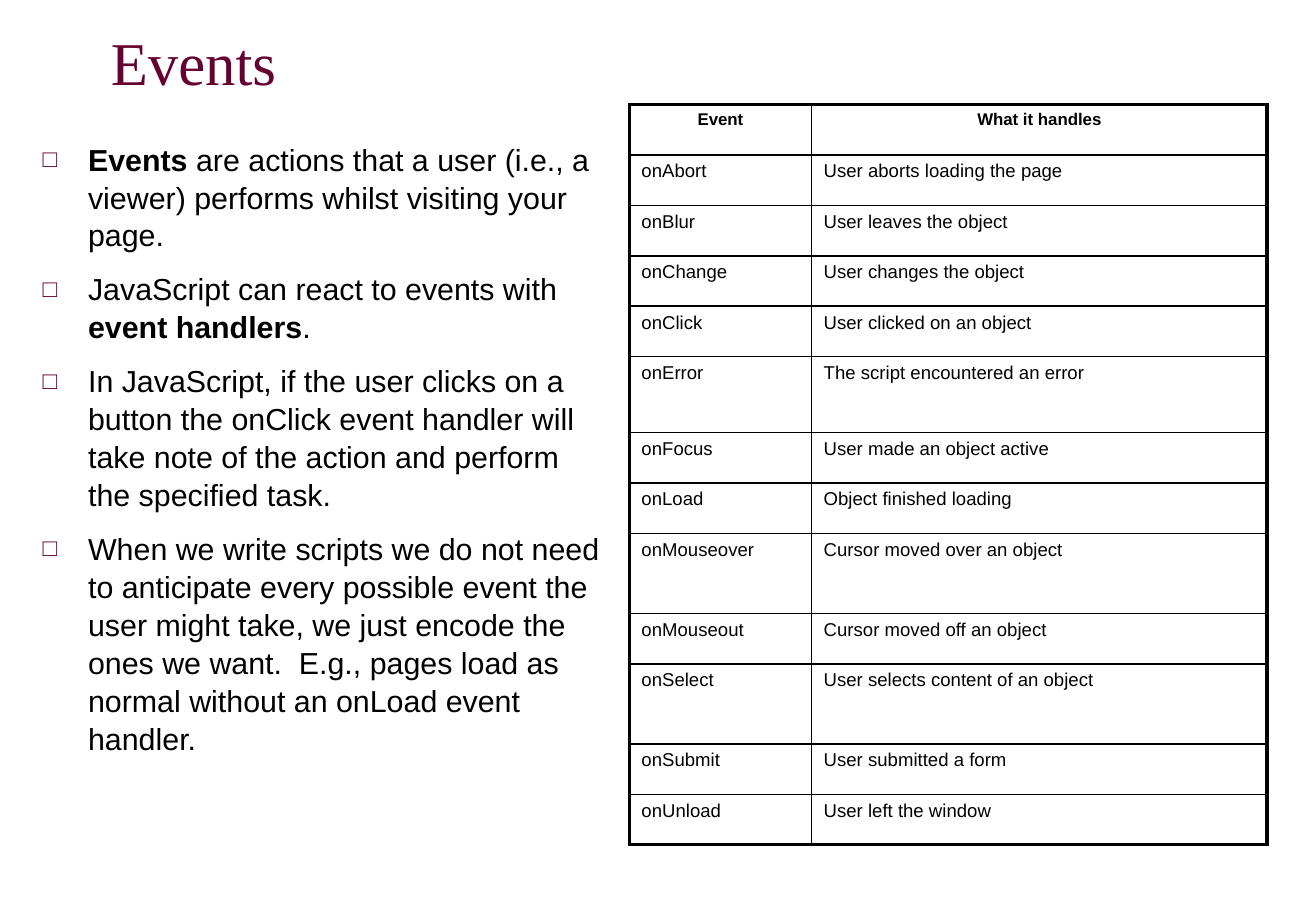
from lxml import etree
from pptx import Presentation
from pptx.dml.color import RGBColor
from pptx.enum import text
from pptx.oxml import ns
from pptx.util import Pt

COLORS = {"title": "660033", "text": "000000"}


def add_run(paragraph, content, size, font="Arial", color="text", bold=False):
    run = paragraph.add_run()
    run.text = content
    run.font.name = font
    run.font.size = Pt(size)
    run.font.bold = bold
    run.font.color.rgb = RGBColor.from_string(COLORS[color])


def add_element(parent, tag, **attributes):
    return etree.SubElement(parent, ns.qn(tag), attributes)


presentation = Presentation()
presentation.slide_width = Pt(780)
presentation.slide_height = Pt(540)
slide = presentation.slides.add_slide(presentation.slide_layouts[1])

title = slide.shapes.title
title.left, title.top, title.width, title.height = Pt(58.5), Pt(0), Pt(663), Pt(72)
title.text_frame.vertical_anchor = text.MSO_ANCHOR.MIDDLE
title.text_frame.auto_size = text.MSO_AUTO_SIZE.NONE
title_paragraph = title.text_frame.paragraphs[0]
title_paragraph.alignment = text.PP_ALIGN.LEFT
add_run(title_paragraph, "Events", 36, "Times New Roman", "title")

points = [
    [("Events", True),
     (" are actions that a user (i.e., a viewer) performs whilst visiting your page.", False)],
    [("JavaScript can react to events with ", False), ("event handlers", True), (".", False)],
    [("In JavaScript, if the user clicks on a button the onClick event handler will "
      "take note of the action and perform the specified task.", False)],
    [("When we write scripts we do not need to anticipate every possible event the "
      "user might take, we just encode the ones we want.  E.g., pages load as normal "
      "without an onLoad event handler.", False)],
]
body = slide.placeholders[1]
body.left, body.top, body.width, body.height = Pt(18), Pt(79), Pt(348), Pt(420)
body.text_frame.auto_size = text.MSO_AUTO_SIZE.NONE
for index, point in enumerate(points):
    paragraph = body.text_frame.add_paragraph() if index else body.text_frame.paragraphs[0]
    paragraph.line_spacing = 1.04
    paragraph.space_before = Pt(3.6 if index else 0)
    paragraph.space_after = Pt(6)
    properties = paragraph._p.get_or_add_pPr()
    properties.set("marL", str(Pt(27)))
    properties.set("indent", str(Pt(-27)))
    bullet_color = add_element(properties, "a:buClr")
    add_element(bullet_color, "a:srgbClr", val=COLORS["title"])
    add_element(properties, "a:buSzPct", val="80000")
    add_element(properties, "a:buFont", typeface="Arial")
    add_element(properties, "a:buChar", char="□")
    for content, bold in point:
        add_run(paragraph, content, 18, bold=bold)

handlers = [
    ("Event", "What it handles"),
    ("onAbort", "User aborts loading the page"),
    ("onBlur", "User leaves the object"),
    ("onChange", "User changes the object"),
    ("onClick", "User clicked on an object"),
    ("onError", "The script encountered an error"),
    ("onFocus", "User made an object active"),
    ("onLoad", "Object finished loading"),
    ("onMouseover", "Cursor moved over an object"),
    ("onMouseout", "Cursor moved off an object"),
    ("onSelect", "User selects content of an object"),
    ("onSubmit", "User submitted a form"),
    ("onUnload", "User left the window"),
]
tall_rows = {"onError": 45, "onMouseover": 47.5, "onSelect": 47.5}
last_row = len(handlers) - 1
table = slide.shapes.add_table(len(handlers), 2, Pt(373), Pt(62), Pt(378), Pt(439)).table
table.first_row = False
table.horz_banding = False
table.columns[0].width = Pt(108)
table.columns[1].width = Pt(270)

for row, entries in enumerate(handlers):
    table.rows[row].height = Pt(tall_rows.get(entries[0], 29.9))
    for column, content in enumerate(entries):
        cell = table.cell(row, column)
        paragraph = cell.text_frame.paragraphs[0]
        if row == 0:
            paragraph.alignment = text.PP_ALIGN.CENTER
        add_run(paragraph, content, 11 if row else 10, bold=row == 0)
        outer_edges = {"a:lnL": column == 0, "a:lnR": column == 1,
                       "a:lnT": row == 0, "a:lnB": row == last_row}
        cell_properties = cell._tc.get_or_add_tcPr()
        for edge, is_outer in outer_edges.items():
            line = add_element(cell_properties, edge, w=str(Pt(2.25 if is_outer else 1)))
            line_fill = add_element(line, "a:solidFill")
            add_element(line_fill, "a:srgbClr", val=COLORS["text"])
        cell.fill.background()

presentation.save("out.pptx")
